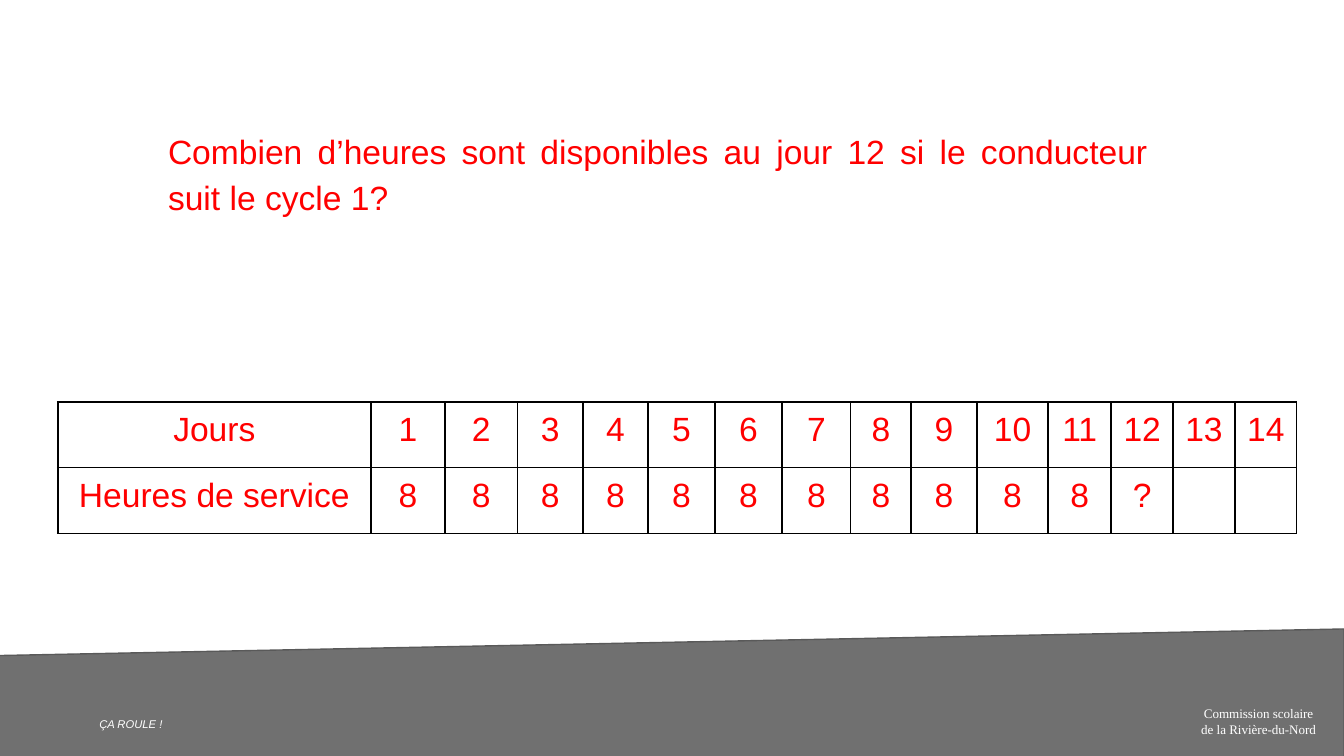
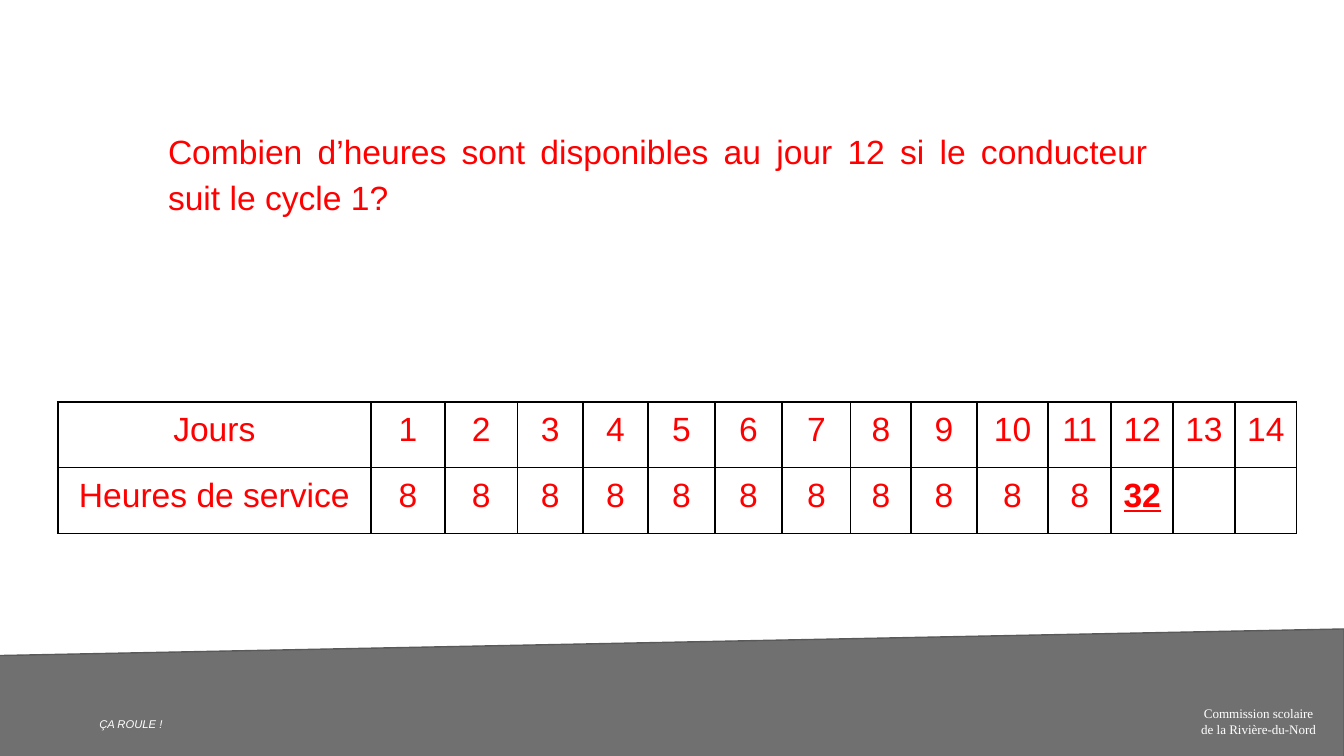
from dataclasses import dataclass
from lxml import etree
from pptx import Presentation
from pptx.dml.color import RGBColor
from pptx.enum import shapes, text
from pptx.oxml import ns
from pptx.util import Inches, Pt


@dataclass(frozen=True)
class Theme:
    red: str = "FF0000"
    white: str = "FFFFFF"
    black: str = "000000"
    edge: str = "595959"
    sans: str = "Arial"
    serif: str = "Times New Roman"
    main: int = 18
    board: int = 7
    tag: int = 6
    veil: int = 56


T = Theme()
AL = text.PP_ALIGN
QUERY = "Combien d’heures sont disponibles au jour 12 si le conducteur suit le cycle 1?"
COLS = [2.33, 0.55, 0.54, 0.49, 0.48, 0.5, 0.5, 0.51,
        0.45, 0.49, 0.53, 0.47, 0.46, 0.46, 0.46]
DAYS = len(COLS) - 1
ROW = 0.49


def color(code):
    return RGBColor.from_string(code)


def sub(node, tag, **attrs):
    return etree.SubElement(node, ns.qn(tag), attrs)


def write(frame, words, size=T.main, face=T.sans, tint=T.red, align=AL.LEFT,
          bold=False, italic=False, under=False, lead=None):
    """Fill a text frame, one paragraph for each line of words."""
    for i, line in enumerate(words.split("\n")):
        para = frame.add_paragraph() if i else frame.paragraphs[0]
        para.alignment = align
        if lead:
            para.line_spacing = lead
        run = para.add_run()
        run.text = line
        font = run.font
        font.size, font.name = Pt(size), face
        font.bold, font.italic, font.underline = bold, italic, under
        font.color.rgb = color(tint)


def setup(frame, pad=0.1):
    frame.word_wrap = True
    frame.auto_size = text.MSO_AUTO_SIZE.NONE
    frame.vertical_anchor = text.MSO_ANCHOR.TOP
    frame.margin_left = frame.margin_right = Inches(pad)
    frame.margin_top = frame.margin_bottom = Inches(pad)


def label(slide, box, words, **style):
    frame = slide.shapes.add_textbox(*map(Inches, box)).text_frame
    setup(frame)
    write(frame, words, tint=T.white, **style)


def footer(slide, box):
    x, y, w, h = box
    band = slide.shapes.add_shape(
        shapes.MSO_SHAPE.FLOWCHART_MANUAL_INPUT, *map(Inches, box))
    band.shadow.inherit = False
    band.fill.solid()
    band.fill.fore_color.rgb = color(T.black)
    tone = band.fill._xPr.find(".//" + ns.qn("a:srgbClr"))
    sub(tone, "a:alpha", val=str(T.veil * 1000))
    band.line.color.rgb = color(T.edge)
    band.line.width = Pt(0.75)
    label(slide, (x + w - 1.27, y + 0.47, 1.27, 0.3),
          "Commission scolaire\nde la Rivière-du-Nord",
          size=T.board, face=T.serif, align=AL.CENTER)
    label(slide, (x + 0.66, y + 0.56, 0.81, 0.29), "ÇA ROULE !",
          size=T.tag, italic=True)


def title(slide, box):
    shape = slide.shapes.title
    shape.left, shape.top, shape.width, shape.height = map(Inches, box)
    setup(shape.text_frame)
    write(shape.text_frame, QUERY, align=AL.JUSTIFY, lead=1.15)


def border(cell):
    props = cell._tc.get_or_add_tcPr()
    for side in "LRTB":
        line = sub(props, f"a:ln{side}", w=str(Pt(1)))
        sub(sub(line, "a:solidFill"), "a:srgbClr", val=T.black)


def hours(slide, box, last, **style):
    """Place the table of days and hours; last is the entry for day 12."""
    rows = [["Jours", *map(str, range(1, DAYS + 1))],
            ["Heures de service", *["8"] * 11, last, "", ""]]
    grid = slide.shapes.add_table(
        len(rows), len(COLS), *map(Inches, box)).table
    grid.first_row = grid.horz_banding = False
    for col, width in zip(grid.columns, COLS):
        col.width = Inches(width)
    for r, row in enumerate(rows):
        grid.rows[r].height = Inches(ROW)
        for c, words in enumerate(row):
            cell = grid.cell(r, c)
            border(cell)
            cell.fill.background()
            cell.margin_left = cell.margin_right = Inches(0.07)
            cell.margin_top = cell.margin_bottom = Inches(0.07)
            if words:
                extra = style if (r, c) == (1, 12) else {}
                write(cell.text_frame, words, align=AL.CENTER, **extra)


def page(deck, last, **style):
    slide = deck.slides.add_slide(deck.slide_layouts[5])
    footer(slide, (-0.02, 4.68, 10.02, 0.99))
    hours(slide, (0.43, 2.99, sum(COLS), 2 * ROW), last, **style)
    title(slide, (1.15, 0.83, 7.49, 0.85))


def main():
    deck = Presentation()
    deck.slide_width = Inches(10)
    deck.slide_height = deck.slide_width * 9 // 16
    page(deck, "?")
    page(deck, "32", bold=True, under=True)
    deck.save("out.pptx")


if __name__ == "__main__":
    main()
